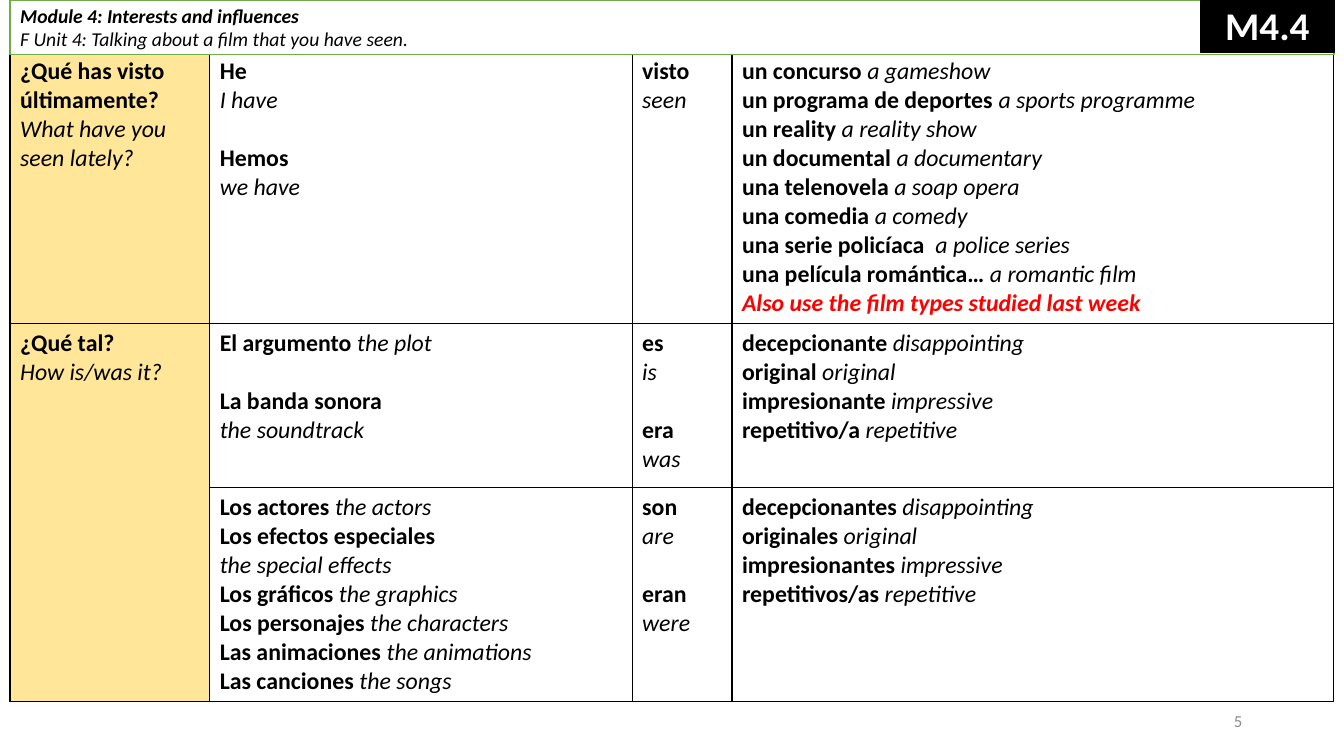
import dataclasses
import typing

import lxml.etree
import pptx
import pptx.dml.color
import pptx.enum.shapes
import pptx.enum.text
import pptx.oxml.ns
import pptx.util

Inches = pptx.util.Inches
Pt = pptx.util.Pt
Align = pptx.enum.text.PP_ALIGN

HUES = {
    "black": "000000",
    "white": "FFFFFF",
    "gold": "FFE699",
    "green": "70AD47",
    "red": "FF0000",
    "gray": "8C8C8C",
}
FONT = "Calibri"
WIDTHS = (1.98, 4.19, 0.99, 5.97)
HEIGHTS = (2.69, 1.63, 2.12)
GAP = 20.75


@dataclasses.dataclass
class Line:
    bold: str = ""
    slant: str = ""
    both: str = ""
    gap: bool = False
    hue: str = "black"


@dataclasses.dataclass
class Box:
    left: float
    top: float
    width: float
    height: float


GRID = (
    (
        (Line("¿Qué has visto últimamente?"), Line(slant="What have you seen lately?")),
        (Line("He"), Line(slant="I have"), Line("Hemos", gap=True), Line(slant="we have")),
        (Line("visto"), Line(slant="seen")),
        (
            Line("un concurso ", "a gameshow"),
            Line("un programa de deportes ", "a sports programme"),
            Line("un reality", " a reality show"),
            Line("un documental ", "a documentary"),
            Line("una telenovela ", "a soap opera"),
            Line("una comedia ", "a comedy"),
            Line("una serie policíaca  ", "a police series"),
            Line("una película romántica… ", "a romantic film"),
            Line(both="Also use the film types studied last week", hue="red"),
        ),
    ),
    (
        (Line("¿Qué tal?"), Line(slant="How is/was it?")),
        (
            Line("El argumento ", "the plot"),
            Line("La banda sonora", gap=True),
            Line(slant="the soundtrack"),
        ),
        (Line("es"), Line(slant="is"), Line("era", gap=True), Line(slant="was")),
        (
            Line("decepcionante ", "disappointing"),
            Line("original ", "original"),
            Line("impresionante", " impressive"),
            Line("repetitivo/a", " repetitive"),
        ),
    ),
    (
        (),
        (
            Line("Los actores ", "the actors"),
            Line("Los efectos especiales"),
            Line(slant="the special effects"),
            Line("Los gráficos ", "the graphics"),
            Line("Los personajes ", "the characters"),
            Line("Las animaciones ", "the animations"),
            Line("Las canciones ", "the songs"),
        ),
        (Line("son"), Line(slant="are"), Line("eran", gap=True), Line(slant="were")),
        (
            Line("decepcionantes ", "disappointing"),
            Line("originales", " original"),
            Line("impresionantes", " impressive"),
            Line("repetitivos/as", " repetitive"),
        ),
    ),
)
HEAD = (
    Line(both="Module 4: Interests and influences"),
    Line(slant="F Unit 4: Talking about a film that you have seen."),
)


def shade(name: str) -> pptx.dml.color.RGBColor:
    return pptx.dml.color.RGBColor.from_string(HUES[name])


def write(frame: typing.Any, lines: typing.Sequence[Line], size: float,
          align: Align = Align.LEFT) -> None:
    for index, line in enumerate(lines):
        para = frame.paragraphs[0] if index == 0 else frame.add_paragraph()
        para.alignment = align
        para.space_before = Pt(GAP if line.gap else 0)
        para.font.name = FONT
        para.font.size = Pt(size)
        para.font.color.rgb = shade(line.hue)
        parts = [part for part in (
            (line.bold, True, False), (line.slant, False, True), (line.both, True, True),
        ) if part[0]]
        for text, bold, slant in parts:
            run = para.add_run()
            run.text = text
            font = para.font if len(parts) == 1 else run.font
            font.bold, font.italic = bold, slant


def edge(cell: typing.Any) -> None:
    props = cell._tc.get_or_add_tcPr()
    name = pptx.oxml.ns.qn
    for index, side in enumerate(("a:lnL", "a:lnR", "a:lnT", "a:lnB")):
        line = lxml.etree.Element(name(side), w=str(Pt(1)))
        fill = lxml.etree.SubElement(line, name("a:solidFill"))
        lxml.etree.SubElement(fill, name("a:srgbClr"), val=HUES["black"])
        props.insert(index, line)


def place(shape: typing.Any, box: Box) -> None:
    shape.left, shape.top = Inches(box.left), Inches(box.top)
    shape.width, shape.height = Inches(box.width), Inches(box.height)


def paint(shape: typing.Any, fill: str, line: str) -> None:
    shape.fill.solid()
    shape.fill.fore_color.rgb = shade(fill)
    shape.line.color.rgb = shade(line)
    shape.line.width = Pt(1)


def settle(shape: typing.Any) -> typing.Any:
    frame = shape.text_frame
    frame.word_wrap = True
    frame.auto_size = pptx.enum.text.MSO_AUTO_SIZE.NONE
    frame.vertical_anchor = pptx.enum.text.MSO_ANCHOR.MIDDLE
    return frame


def draw_grid(slide: typing.Any) -> None:
    table = slide.shapes.add_table(
        len(HEIGHTS), len(WIDTHS), Inches(0.1), Inches(0.51),
        Inches(sum(WIDTHS)), Inches(sum(HEIGHTS))).table
    table.first_row = table.horz_banding = False
    for col, width in zip(table.columns, WIDTHS):
        col.width = Inches(width)
    for row, height, cells in zip(table.rows, HEIGHTS, GRID):
        row.height = Inches(height)
        for index, (cell, lines) in enumerate(zip(row.cells, cells)):
            cell.fill.solid()
            cell.fill.fore_color.rgb = shade("white" if index else "gold")
            edge(cell)
            write(cell.text_frame, lines, 17)
    table.cell(1, 0).merge(table.cell(2, 0))


def main() -> None:
    deck = pptx.Presentation()
    deck.slide_width, deck.slide_height = Inches(13.33), Inches(7.5)
    slide = deck.slides.add_slide(deck.slide_layouts[5])
    draw_grid(slide)

    title = slide.shapes.title
    slide.shapes._spTree.append(title._element)
    place(title, Box(0.1, 0, 13.13, 0.54))
    paint(title, "white", "green")
    write(settle(title), HEAD, 14)

    badge = slide.shapes.add_shape(
        pptx.enum.shapes.MSO_SHAPE.RECTANGLE, 0, 0, 0, 0)
    badge.shadow.inherit = False
    place(badge, Box(11.91, -0.02, 1.32, 0.54))
    paint(badge, "black", "black")
    write(settle(badge), [Line("M4.4", hue="white")], 28, Align.CENTER)

    page = slide.shapes.add_textbox(0, 0, 0, 0)
    place(page, Box(9.42, 6.95, 3, 0.4))
    frame = settle(page)
    write(frame, [Line("5", hue="gray")], 12, Align.RIGHT)
    frame.paragraphs[0].font.bold = False

    deck.save("out.pptx")


if __name__ == "__main__":
    main()
